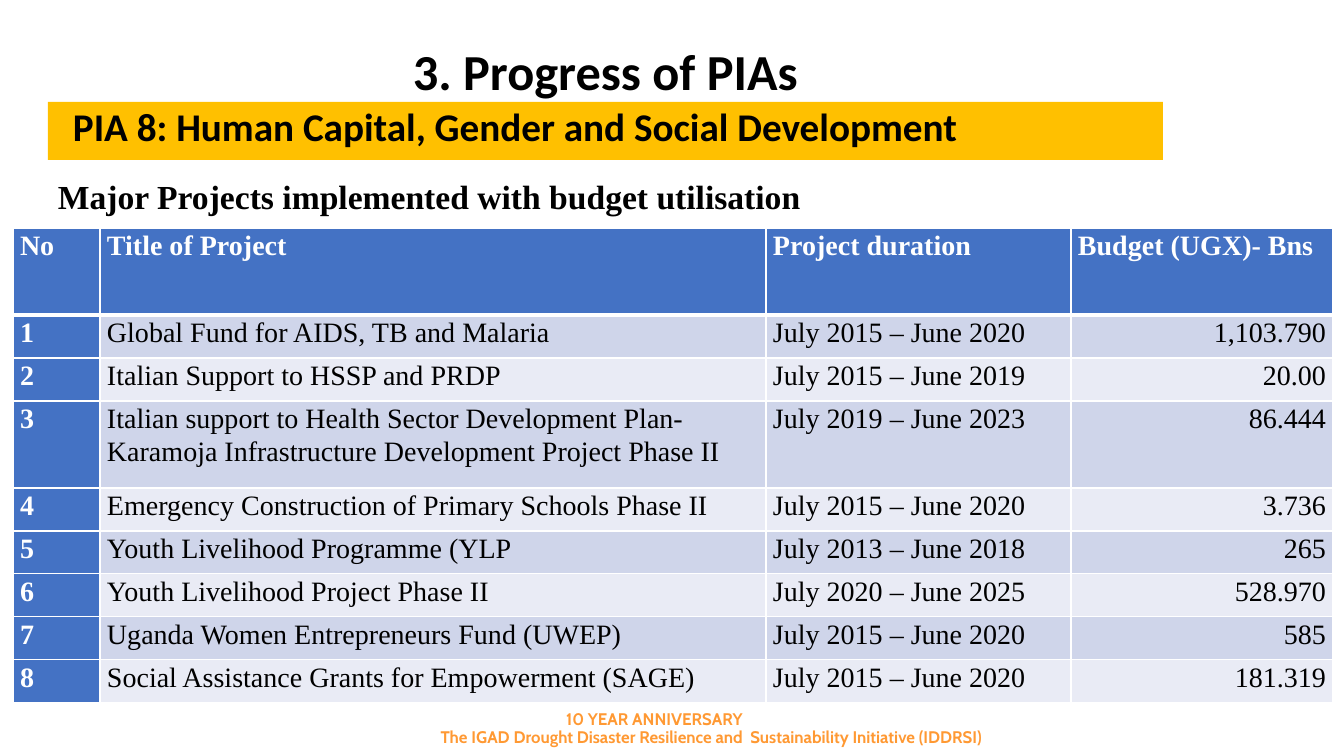
from pptx import Presentation
from pptx.dml.color import RGBColor
from pptx.enum.shapes import MSO_SHAPE
from pptx.enum.text import PP_ALIGN, MSO_ANCHOR
from pptx.oxml import parse_xml
from pptx.oxml.ns import nsdecls
from pptx.util import Pt

PX = 914400 / 100.8
HUES = {"white": "FFFFFF", "black": "000000", "gold": "FFC000", "blue": "4472C4",
        "dark": "CFD5EA", "light": "E9EBF5", "orange": "FF9933"}


def px(*nums):
    return [round(n * PX) for n in nums]


def write(frame, text, size=20, font="Times New Roman", hue="black", bold=True,
          align=PP_ALIGN.LEFT, line=None, after=0, indent=0, pad=(7, 0)):
    frame.word_wrap = True
    frame.vertical_anchor = MSO_ANCHOR.TOP
    frame.margin_left = frame.margin_right = px(pad[0])[0]
    frame.margin_top = frame.margin_bottom = px(pad[1])[0]
    para = frame.paragraphs[0]
    para.alignment = align
    para.space_after = Pt(after)
    if line:
        para.line_spacing = line
    if indent:
        para._p.get_or_add_pPr().set("marL", str(px(indent)[0]))
    run = para.add_run()
    run.text = text
    run.font.size = Pt(size)
    run.font.name = font
    run.font.bold = bold
    run.font.color.rgb = RGBColor.from_string(HUES[hue])


deck = Presentation()
deck.slide_width, deck.slide_height = px(1344, 756)
slide = deck.slides.add_slide(deck.slide_layouts[6])
shapes = slide.shapes

# Footer, title and subtitle
foot = dict(size=12, font="Cabin", hue="orange", align=PP_ALIGN.CENTER, pad=(10, 5))
texts = [
    ((318, 704, 673, 30), "10 YEAR ANNIVERSARY", foot),
    ((375, 722, 673, 30),
     "The IGAD Drought Disaster Resilience and  Sustainability Initiative (IDDRSI)", foot),
    ((48, 40, 1115, 58), "3. Progress of PIAs",
     dict(size=36, font="Calibri", align=PP_ALIGN.CENTER, pad=(0, 0))),
    ((48, 168, 1115, 51), "Major Projects implemented with budget utilisation",
     dict(size=24, line=1.07, after=8, pad=(10, 5))),
]
for place, text, style in texts:
    write(shapes.add_textbox(*px(*place)).text_frame, text, **style)

# Gold heading bar
bar = shapes.add_shape(MSO_SHAPE.RECTANGLE, *px(48, 102, 1115, 58))
bar.shadow.inherit = False
bar.fill.solid()
bar.fill.fore_color.rgb = RGBColor.from_string(HUES["gold"])
bar.line.fill.background()
write(bar.text_frame, "PIA 8: Human Capital, Gender and Social Development", size=28,
      font="Calibri", align=PP_ALIGN.JUSTIFY, after=6, indent=25, pad=(0, 0))

# Project table
rows = [
    ("No", "Title of Project", "Project duration", "Budget (UGX)- Bns"),
    ("1", "Global Fund for AIDS, TB and Malaria", "July 2015 – June 2020", "1,103.790"),
    ("2", "Italian Support to HSSP and PRDP", "July 2015 – June 2019", "20.00"),
    ("3", "Italian support to Health Sector Development Plan- "
          "Karamoja Infrastructure Development Project Phase II",
     "July 2019 – June 2023", "86.444"),
    ("4", "Emergency Construction of Primary Schools Phase II", "July 2015 – June 2020", "3.736"),
    ("5", "Youth Livelihood Programme (YLP", "July 2013 – June 2018", "265"),
    ("6", "Youth Livelihood Project Phase II", "July 2020 – June 2025", "528.970"),
    ("7", "Uganda Women Entrepreneurs Fund (UWEP)", "July 2015 – June 2020", "585"),
    ("8", "Social Assistance Grants for Empowerment (SAGE)", "July 2015 – June 2020", "181.319"),
]
wide = [87, 666, 305, 262]
high = [87, 43, 43, 87] + [43] * 5
grid = shapes.add_table(len(rows), len(wide), *px(13, 228, sum(wide), sum(high))).table
grid.first_col = True
for col, width in zip(grid.columns, px(*wide)):
    col.width = width
for row, height in zip(grid.rows, px(*high)):
    row.height = height

for r, row in enumerate(rows):
    for c, text in enumerate(row):
        cell = grid.cell(r, c)
        head = r == 0 or c == 0
        props = cell._tc.get_or_add_tcPr()
        for side in "LRTB":
            thick = 3 if (r, side) in ((0, "B"), (1, "T")) else 1
            props.append(parse_xml(
                f'<a:ln{side} {nsdecls("a")} w="{Pt(thick)}"><a:solidFill>'
                f'<a:srgbClr val="{HUES["white"]}"/></a:solidFill></a:ln{side}>'))
        cell.fill.solid()
        band = "blue" if head else "dark" if r % 2 else "light"
        cell.fill.fore_color.rgb = RGBColor.from_string(HUES[band])
        write(cell.text_frame, text, hue="white" if head else "black", bold=head,
              align=PP_ALIGN.RIGHT if r and c == 3 else PP_ALIGN.LEFT, line=1.07, after=8)
        cell.margin_left = cell.margin_right = px(7)[0]
        cell.margin_top = cell.margin_bottom = 0

deck.save("out.pptx")
